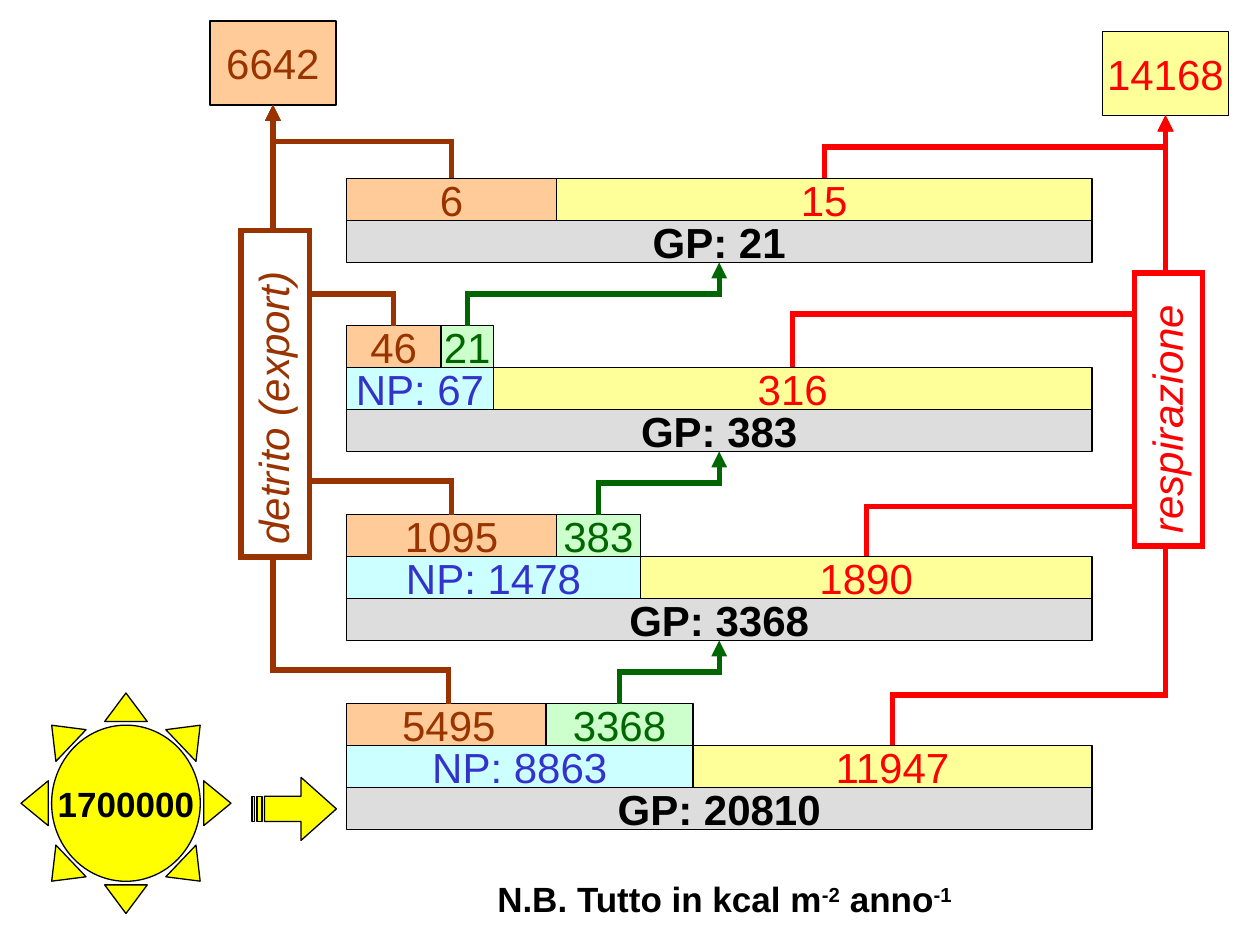
import dataclasses

import pptx
import pptx.dml.color
import pptx.enum.shapes
import pptx.enum.text
import pptx.oxml
import pptx.oxml.ns
import pptx.util

MSO = pptx.enum.shapes.MSO_SHAPE
ALIGN = pptx.enum.text.PP_ALIGN
ANCHOR = pptx.enum.text.MSO_ANCHOR
COLUMNS, ROWS = 120, 90      # grid of the slide
UNIT = pptx.util.Inches(10) / COLUMNS
LEFT, WIDTH, BAR = 33, 71, 4  # the stacked bars, in grid units


@dataclasses.dataclass(frozen=True)
class Theme:
    font: str = "Arial"
    size: int = 24
    small: int = 20
    thin: float = 0.75
    thick: float = 3
    black: str = "000000"
    white: str = "FFFFFF"
    sun: str = "FFFF00"
    # pairs of fill and ink
    gross: tuple = ("DDDDDD", "000000")
    net: tuple = ("CCFFFF", "3333CC")
    detritus: tuple = ("FFCC99", "993300")
    respiration: tuple = ("FFFF99", "FF0000")
    transfer: tuple = ("CCFFCC", "006600")


THEME = Theme()

# gross top, gross, net, detritus, transfer, respiration (values),
# net, detritus and transfer widths, detritus and respiration rises (grid units)
LEVELS = [
    (75, 20810, 8863, 5495, 3368, 11947, 33, 19.5, 14, 3.2, 4.8),
    (57, 3368, 1478, 1095, 383, 1890, 28, 20, 8, 3.2, 4.8),
    (39, 383, 67, 46, 21, 316, 14, 9, 5, 3, 5.1),
    (21, 21, None, 6, None, 15, 20, 20, 0, 3.5, 3),
]


def grid(n):
    return pptx.util.Emu(round(n * UNIT))


def rgb(value):
    return pptx.dml.color.RGBColor.from_string(value)


def element(tag, attributes="", content=""):
    ns = pptx.oxml.ns.nsdecls("a")
    return pptx.oxml.parse_xml(f"<a:{tag} {ns} {attributes}>{content}</a:{tag}>")


def set_line(s, color, width):
    s.line.color.rgb = rgb(color)
    s.line.width = pptx.util.Pt(width)


def sharpen_corners(s):
    ln = s._element.spPr.find(pptx.oxml.ns.qn("a:ln"))
    ln.append(element("miter", 'lim="800000"'))
    return ln


def paint(s, fill, line, width):
    s.shadow.inherit = False
    s.fill.solid()
    s.fill.fore_color.rgb = rgb(fill)
    set_line(s, line, width)


def style_run(r, size, color, bold=False):
    r.font.name, r.font.size = THEME.font, pptx.util.Pt(size)
    r.font.bold = bold
    r.font.color.rgb = rgb(color)


def add_box(slide, x, y, w, h, text, colors, bold=False, kind=MSO.RECTANGLE,
            size=THEME.size):
    s = slide.shapes.add_shape(kind, grid(x), grid(y), grid(w), grid(h))
    paint(s, colors[0], THEME.black, THEME.thin)
    tf = s.text_frame
    tf.text = str(text)
    tf.word_wrap = False
    tf.vertical_anchor = ANCHOR.MIDDLE
    p = tf.paragraphs[0]
    p.alignment = ALIGN.CENTER
    style_run(p.runs[0], size, colors[1], bold)
    return s


def add_side_label(slide, cx, cy, length, text, color):
    thickness = 6.5
    s = add_box(slide, cx - length / 2, cy - thickness / 2, length, thickness,
                text, (THEME.white, color))
    s.rotation = 270
    set_line(s, color, THEME.thick)
    sharpen_corners(s)
    tf = s.text_frame
    tf.word_wrap = True
    tf.vertical_anchor = ANCHOR.TOP
    p = tf.paragraphs[0]
    p.alignment = ALIGN.LEFT
    p.runs[0].font.italic = True


def add_flow(slide, start, end, rise, color):
    """Elbow arrow that leaves upwards, runs sideways, then goes up to its end."""
    (x1, y1), (x2, y2) = start, end
    cx, cy = (x1 + x2) / 2, (y1 + y2) / 2
    height, half_width = y1 - y2, abs(x2 - x1) / 2
    # The elbow is laid flat around its centre, then turned upright
    side = 1 if x2 > x1 else -1
    c = slide.shapes.add_connector(
        pptx.enum.shapes.MSO_CONNECTOR.ELBOW,
        grid(cx - side * height / 2), grid(cy - half_width),
        grid(cx + side * height / 2), grid(cy + half_width))
    set_line(c, color, THEME.thick)
    sharpen_corners(c).append(element("tailEnd", 'type="triangle"'))
    qn, props = pptx.oxml.ns.qn, c._element.spPr
    props.find(qn("a:xfrm")).set("rot", str((270 if side > 0 else 90) * 60000))
    geometry = props.find(qn("a:prstGeom"))
    for old in geometry.findall(qn("a:avLst")):
        geometry.remove(old)
    bend = round(rise / height * 100000)
    geometry.append(element("avLst", "",
                            f'<a:gd name="adj1" fmla="val {bend}"/>'))
    props.append(element("effectLst"))


def add_striped_arrow(slide):
    # Points in hundredths of an inch
    head = [(239, 617), (239, 632), (210, 632), (210, 652),
            (239, 652), (239, 667), (267, 642)]
    stripes = [[(a, 632), (a, 652), (b, 652), (b, 632)]
               for a, b in ((204, 208), (200, 202))]
    builder = slide.shapes.build_freeform(
        *head[0], scale=pptx.util.Inches(1) / 100)
    builder.add_line_segments(head[1:], close=True)
    for stripe in stripes:
        builder.move_to(*stripe[0])
        builder.add_line_segments(stripe[1:], close=True)
    paint(builder.convert_to_shape(), THEME.sun, THEME.black, THEME.thin)


def add_bars(slide):
    for top, gross, _, det, passed, resp, net_w, det_w, pass_w, _, _ in LEVELS:
        upper = top - (2 * BAR if passed else BAR)
        add_box(slide, LEFT, top, WIDTH, BAR, f"GP: {gross}", THEME.gross, True)
        add_box(slide, LEFT, upper, det_w, BAR, det, THEME.detritus)
        add_box(slide, LEFT + net_w, top - BAR, WIDTH - net_w, BAR, resp,
                THEME.respiration)
        if passed:
            add_box(slide, LEFT + net_w - pass_w, upper, pass_w, BAR, passed,
                    THEME.transfer)


def add_flows(slide):
    for (top, _, _, _, passed, _, net_w, det_w, pass_w,
         det_rise, resp_rise) in LEVELS:
        upper = top - (2 * BAR if passed else BAR)
        add_flow(slide, (LEFT + det_w / 2, upper), (26, 10), det_rise,
                 THEME.detritus[1])
        add_flow(slide, (LEFT + (net_w + WIDTH) / 2, top - BAR), (111, 11),
                 resp_rise, THEME.respiration[1])
        if passed:
            add_flow(slide, (LEFT + net_w - pass_w / 2, upper),
                     (LEFT + WIDTH / 2, upper - 6), 3, THEME.transfer[1])


def add_note(slide):
    s = slide.shapes.add_textbox(grid(39), grid(83), grid(60), grid(5.2))
    tf = s.text_frame
    tf.word_wrap = True
    p = tf.paragraphs[0]
    p.alignment = ALIGN.CENTER
    for text, raised in (("N.B. Tutto in kcal m", False), ("-2", True),
                         (" anno", False), ("-1", True)):
        r = p.add_run()
        r.text = text
        style_run(r, THEME.small, THEME.black, bold=True)
        if raised:
            r._r.get_or_add_rPr().set("baseline", "30000")


def main():
    prs = pptx.Presentation()
    prs.slide_width, prs.slide_height = grid(COLUMNS), grid(ROWS)
    slide = prs.slides.add_slide(prs.slide_layouts[6])

    # Trophic levels and totals
    add_bars(slide)
    add_box(slide, 20, 2, 12, 8, 6642, THEME.detritus)
    add_box(slide, 105, 3, 12, 8, 14168, THEME.respiration)

    # Solar input
    sun = add_box(slide, 2, 66, 20, 21, 1700000, (THEME.sun, THEME.black),
                  True, MSO.SUN, THEME.small)
    sun.adjustments[0] = 0.146
    add_striped_arrow(slide)

    # Flows, then the parts that lie over them
    add_flows(slide)
    for top, _, net, _, _, _, net_w, *_ in LEVELS:
        if net:
            add_box(slide, LEFT, top - BAR, net_w, BAR, f"NP: {net}", THEME.net)
    add_side_label(slide, 111.3, 39, 26, "respirazione", THEME.respiration[1])
    add_side_label(slide, 26.2, 37.5, 31.1, "detrito (export)",
                   THEME.detritus[1])
    add_note(slide)

    prs.save("out.pptx")


if __name__ == "__main__":
    main()
